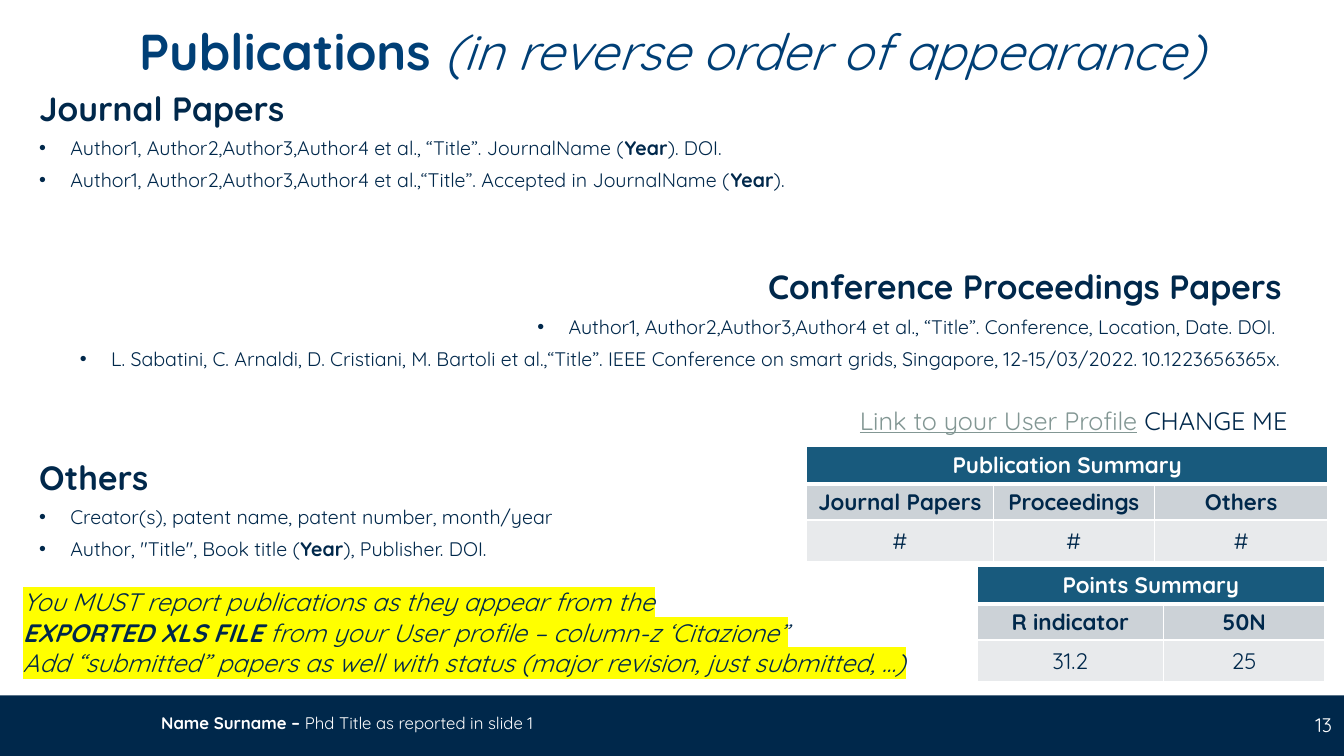
from dataclasses import dataclass

from lxml.etree import SubElement
from pptx import Presentation
from pptx.dml.color import RGBColor
from pptx.enum.shapes import MSO_SHAPE
from pptx.enum.text import MSO_ANCHOR, PP_ALIGN
from pptx.oxml import parse_xml
from pptx.oxml.ns import nsdecls, qn
from pptx.util import Inches, Pt

FONT = "Quicksand"
NAVY = RGBColor(0x00, 0x28, 0x4B)
BLUE = RGBColor(0x00, 0x3F, 0x76)
TEAL = RGBColor(0x18, 0x5A, 0x7D)
GREY = RGBColor(0xCC, 0xD2, 0xD7)
PALE = RGBColor(0xE8, 0xEA, 0xEC)
SAGE = RGBColor(0x83, 0x97, 0x94)
YELLOW = RGBColor(0xFF, 0xFF, 0x00)
WHITE = RGBColor(0xFF, 0xFF, 0xFF)
LEFT, MID, RIGHT = PP_ALIGN.LEFT, PP_ALIGN.CENTER, PP_ALIGN.RIGHT


@dataclass
class Bit:
    text: str
    size: float
    color: RGBColor = NAVY
    bold: bool = False
    italic: bool = False
    under: bool = False
    mark: RGBColor | None = None


@dataclass
class Line:
    bits: list[Bit]
    align: PP_ALIGN = LEFT
    bullet: bool = False
    after: float = 0
    pitch: float | None = None


@dataclass
class Block:
    box: tuple[float, float, float, float]
    lines: list[Line]


@dataclass
class Section:
    box: tuple[float, float, float, float]
    head: str
    items: list[list[str]]  # every second piece is bold
    align: PP_ALIGN = LEFT


@dataclass
class Grid:
    left: float
    top: float
    cols: list[float]
    title: str
    heads: list[str]
    values: list[str]


def add_bit(para, bit: Bit) -> None:
    run = para.add_run()
    run.text = bit.text
    font = run.font
    font.name, font.size = FONT, Pt(bit.size)
    font.bold, font.italic, font.underline = bit.bold, bit.italic, bit.under
    font.color.rgb = bit.color
    if bit.mark is not None:
        mark = parse_xml(f'<a:highlight {nsdecls("a")}><a:srgbClr val="{bit.mark}"/></a:highlight>')
        font.fill._xPr.find(qn("a:solidFill")).addnext(mark)


def add_block(slide, block: Block) -> None:
    frame = slide.shapes.add_textbox(*map(Inches, block.box)).text_frame
    frame.word_wrap = True
    for num, line in enumerate(block.lines):
        para = frame.add_paragraph() if num else frame.paragraphs[0]
        para.alignment = line.align
        para.space_after = Pt(line.after)
        if line.pitch:
            para.line_spacing = Pt(line.pitch)
        if line.bullet:
            props = para._p.get_or_add_pPr()
            props.set("marL", str(Inches(0.31)))
            props.set("indent", str(Inches(-0.31)))
            SubElement(props, qn("a:buFont"), typeface="Arial")
            SubElement(props, qn("a:buChar"), char="•")
        for bit in line.bits:
            add_bit(para, bit)


def add_section(slide, part: Section) -> None:
    lines = [Line([Bit(part.head, 24, bold=True)], part.align, after=6)]
    for item in part.items:
        bits = [Bit(text, 14, bold=num % 2 == 1) for num, text in enumerate(item)]
        lines.append(Line(bits, part.align, bullet=True, after=6))
    add_block(slide, Block(part.box, lines))


def style_cell(cell, text: str, fill: RGBColor, ink: RGBColor, bold: bool, base: float) -> None:
    cell.fill.solid()
    cell.fill.fore_color.rgb = fill
    cell.vertical_anchor = MSO_ANCHOR.MIDDLE
    cell.margin_top = cell.margin_bottom = Inches(0.03)
    para = cell.text_frame.paragraphs[0]
    para.alignment = MID
    add_bit(para, Bit(text, 16, ink, bold))
    props = cell._tc.get_or_add_tcPr()
    for num, (side, width) in enumerate((("L", 1), ("R", 1), ("T", 1), ("B", base))):
        props.insert(num, parse_xml(
            f'<a:ln{side} {nsdecls("a")} w="{Pt(width)}"><a:solidFill>'
            f'<a:srgbClr val="{WHITE}"/></a:solidFill></a:ln{side}>'))


def add_grid(slide, grid: Grid) -> None:
    rows = [0.37, 0.36, 0.41]
    size = (grid.left, grid.top, sum(grid.cols), sum(rows))
    table = slide.shapes.add_table(len(rows), len(grid.cols), *map(Inches, size)).table
    for col, width in zip(table.columns, grid.cols):
        col.width = Inches(width)
    for row, height in zip(table.rows, rows):
        row.height = Inches(height)
    table.cell(0, 0).merge(table.cell(0, len(grid.cols) - 1))
    style_cell(table.cell(0, 0), grid.title, TEAL, WHITE, True, 3)
    for col, (head, value) in enumerate(zip(grid.heads, grid.values)):
        style_cell(table.cell(1, col), head, GREY, NAVY, True, 1)
        style_cell(table.cell(2, col), value, PALE, NAVY, False, 1)


def note(text: str, bold: bool = False) -> Bit:
    return Bit(text, 18, bold=bold, italic=True, mark=YELLOW)


SECTIONS = [
    Section((0.29, 0.82, 12.29, 1.94), "Journal Papers", [
        ["Author1, Author2,Author3,Author4 et al., “Title”. JournalName (", "Year", "). DOI."],
        ["Author1, Author2,Author3,Author4 et al.,“Title”. Accepted in JournalName (", "Year", ")."],
    ]),
    Section((0.65, 2.59, 12.16, 1.97), "Conference Proceedings Papers", [
        ["Author1, Author2,Author3,Author4 et al., “Title”. Conference, Location, Date. DOI. "],
        ["L. Sabatini, C. Arnaldi, D. Cristiani, M. Bartoli et al.,“Title”. "
         "IEEE Conference on smart grids, Singapore, 12-15/03/2022. 10.1223656365x. "],
    ], RIGHT),
    Section((0.29, 4.48, 12.45, 1.5), "Others", [
        ["Creator(s), patent name, patent number, month/year"],
        ["Author, \"Title\", Book title (", "Year", "), Publisher. DOI."],
    ]),
]

BLOCKS = [
    # Title
    Block((0.29, 0.2, 12.75, 0.77), [Line([
        Bit("Publications ", 36, BLUE, bold=True),
        Bit("(in reverse order of appearance)", 36, BLUE, italic=True)], MID, pitch=40)]),
    # Footer
    Block((1.5, 7.02, 10.32, 0.4), [Line([
        Bit("Name Surname – ", 12, WHITE, bold=True),
        Bit("Phd Title as reported in slide 1", 12, WHITE)])]),
    Block((12.68, 7.02, 0.63, 0.4), [Line([Bit("13", 14, WHITE)], RIGHT)]),
    # Profile line
    Block((8.43, 3.97, 4.74, 0.4), [Line([
        Bit("Link to your User Profile", 18, SAGE, under=True),
        Bit(" CHANGE ME", 18)])]),
    # Marked advice
    Block((0.13, 5.77, 9.56, 1.01), [
        Line([note("You MUST report publications as they appear from the")]),
        Line([note("EXPORTED XLS FILE ", True),
              note("from your User profile – column-z ‘Citazione”")]),
        Line([note("Add “submitted” papers as well with status "
                   "(major revision, just submitted, …)")])]),
]

GRIDS = [
    Grid(8, 4.43, [1.85, 1.6, 1.72], "Publication Summary",
         ["Journal Papers", "Proceedings", "Others"], ["#"] * 3),
    Grid(9.69, 5.62, [1.85, 1.6], "Points Summary", ["R indicator", "50N"], ["31.2", "25"]),
]


def main() -> None:
    deck = Presentation()
    deck.slide_width, deck.slide_height = Inches(13.33), Inches(7.5)
    slide = deck.slides.add_slide(deck.slide_layouts[6])

    # Footer bar
    bar = slide.shapes.add_shape(MSO_SHAPE.RECTANGLE, *map(Inches, (0, 6.9, 13.33, 0.6)))
    bar.shadow.inherit = False
    bar.fill.solid()
    bar.fill.fore_color.rgb = NAVY
    bar.line.fill.background()

    # Text and tables
    for part in SECTIONS:
        add_section(slide, part)
    for block in BLOCKS:
        add_block(slide, block)
    for grid in GRIDS:
        add_grid(slide, grid)
    deck.save("out.pptx")


if __name__ == "__main__":
    main()
